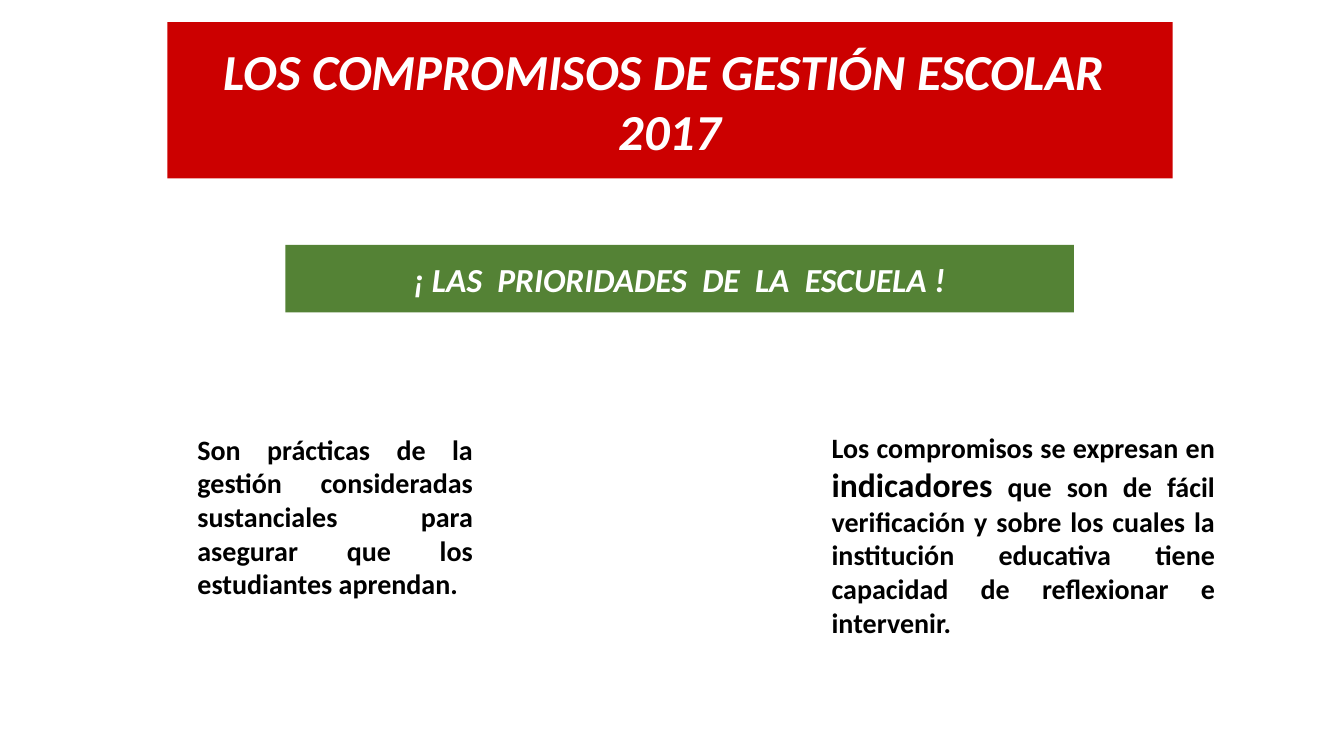
from pptx import Presentation
from pptx.dml.color import RGBColor
from pptx.enum.shapes import MSO_SHAPE
from pptx.enum.text import MSO_ANCHOR, MSO_AUTO_SIZE, PP_ALIGN
from pptx.util import Inches, Pt

RED = RGBColor(0xCC, 0x00, 0x00)
GREEN = RGBColor(0x54, 0x82, 0x35)
WHITE = RGBColor(0xFF, 0xFF, 0xFF)
BLACK = RGBColor(0x00, 0x00, 0x00)

HEADING = "LOS COMPROMISOS DE GESTIÓN ESCOLAR  2017"
HEADING_BOX = (1.66, 0.22, 9.97, 1.55)
PRIORITIES = "¡ LAS  PRIORIDADES  DE  LA  ESCUELA !"
PRIORITIES_BOX = (2.83, 2.43, 7.82, 0.67)
STATEMENTS = [
    ((1.86, 4.24, 2.93, 2.19), [
        ("Son prácticas de la gestión consideradas sustanciales para "
         "asegurar que los estudiantes aprendan. ", 20),
    ]),
    ((8.15, 4.22, 4, 2.19), [
        ("Los compromisos se expresan en ", 20),
        ("indicadores", 24),
        (" que son de fácil verificación y sobre los cuales la institución "
         "educativa tiene capacidad de reflexionar e intervenir.", 20),
    ]),
]


def write(frame, runs, color, align, italic=False):
    """Fill a text frame with one bold paragraph of sized runs."""
    frame.word_wrap = True
    frame.auto_size = MSO_AUTO_SIZE.NONE
    paragraph = frame.paragraphs[0]
    paragraph.alignment = align
    for text, size in runs:
        run = paragraph.add_run()
        run.text = text
        run.font.name = "Calibri"
        run.font.size = Pt(size)
        run.font.bold = True
        run.font.italic = italic
        run.font.color.rgb = color


def fill_banner(banner, fill, text, size):
    """Colour a banner and centre its italic caption."""
    banner.fill.solid()
    banner.fill.fore_color.rgb = fill
    banner.line.fill.background()
    banner.text_frame.vertical_anchor = MSO_ANCHOR.MIDDLE
    write(banner.text_frame, [(text, size)], WHITE, PP_ALIGN.CENTER, italic=True)


def main():
    """Build the school commitments slide."""
    deck = Presentation()
    deck.slide_width, deck.slide_height = Inches(13.33), Inches(7.5)
    slide = deck.slides.add_slide(deck.slide_layouts.get_by_name("Title Only"))

    heading = slide.shapes.title
    heading.left, heading.top, heading.width, heading.height = map(Inches, HEADING_BOX)
    fill_banner(heading, RED, HEADING, 36)

    priorities = slide.shapes.add_shape(MSO_SHAPE.RECTANGLE, *map(Inches, PRIORITIES_BOX))
    priorities.shadow.inherit = False
    fill_banner(priorities, GREEN, PRIORITIES, 24)

    for box, runs in STATEMENTS:
        statement = slide.shapes.add_textbox(*map(Inches, box))
        write(statement.text_frame, runs, BLACK, PP_ALIGN.JUSTIFY)

    deck.save("out.pptx")


if __name__ == "__main__":
    main()
